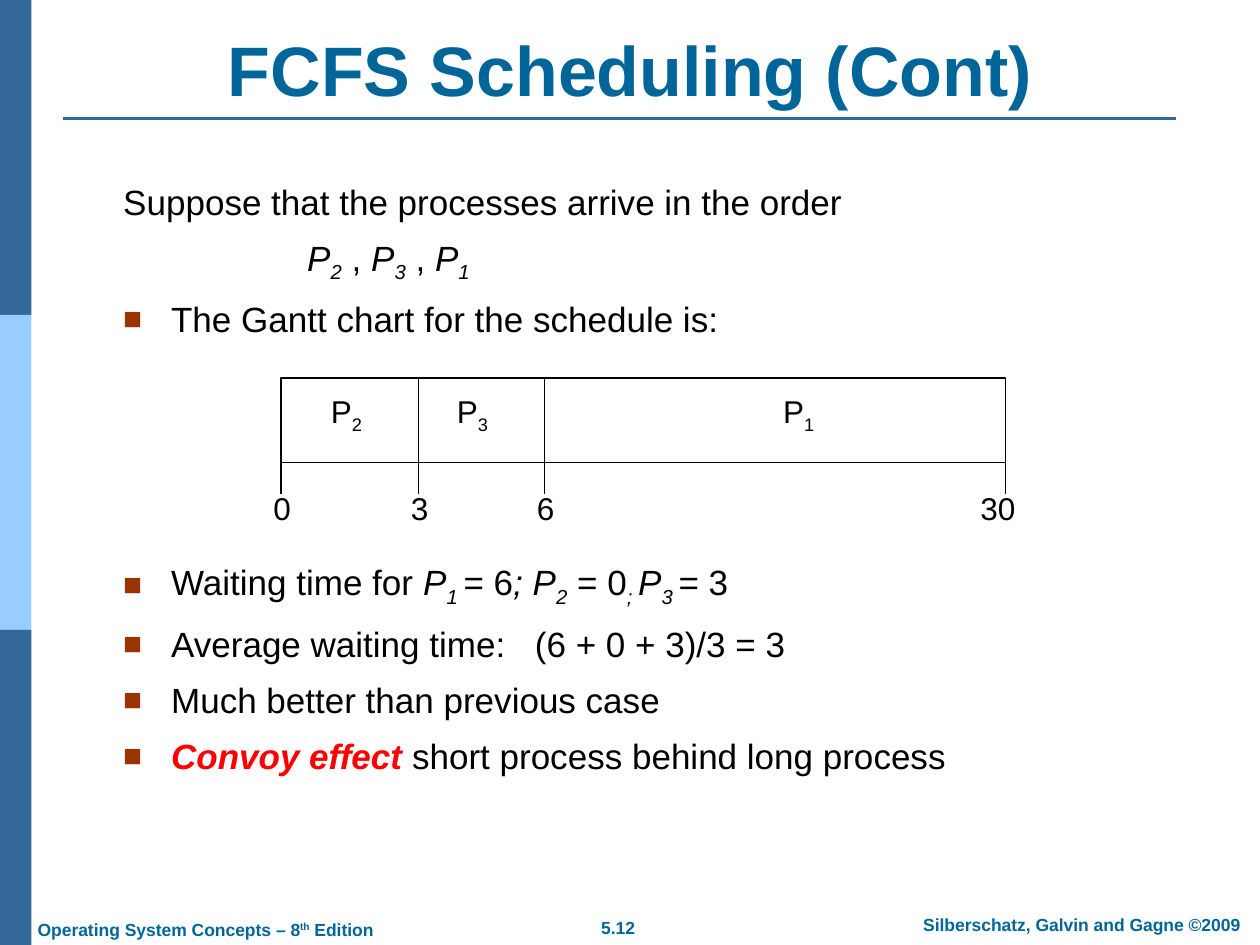
from lxml.etree import SubElement
from pptx import Presentation
from pptx.dml.color import RGBColor
from pptx.enum.shapes import MSO_CONNECTOR as LINE, MSO_SHAPE as SHAPE
from pptx.enum.text import MSO_ANCHOR as ANCHOR, MSO_AUTO_SIZE as AUTO, PP_ALIGN as ALIGN
from pptx.oxml.ns import qn
from pptx.util import Inches, Pt

BLUE = RGBColor(0x33, 0x66, 0x99)
LIGHT = RGBColor(0x99, 0xCC, 0xFF)
TEAL = RGBColor(0x00, 0x66, 0x99)
BLACK = RGBColor(0, 0, 0)
WHITE = RGBColor(255, 255, 255)
RED = RGBColor(255, 0, 0)
RUST = "993300"

TITLE = "FCFS Scheduling (Cont)"
BANDS = [BLUE, LIGHT, BLUE]

# Run styles: extra font values, baseline shift and letter spacing
STYLES = {
    "plain": ({}, {}),
    "it": ({"italic": True}, {}),
    "sub": ({}, {"baseline": "-25000"}),
    "itsub": ({"italic": True}, {"baseline": "-25000"}),
    "sup": ({}, {"baseline": "30000"}),
    "key": ({"italic": True, "bold": True, "color": RED}, {}),
    "wide": ({}, {"spc": "1110"}),
}


def proc(num, end=""):
    return [("P", "it"), (num + end, "itsub")]


# Body lines: left indent, bullet, space before in points, runs
BODY = [
    (0, False, 0, [("Suppose that the processes arrive in the order", "plain")]),
    (1.46, False, 8, proc("2") + [(" , ", "plain")] + proc("3")
     + [(" , ", "plain")] + proc("1")),
    (0.38, True, 8, [("The Gantt chart for the schedule is:", "plain")]),
    (0.38, True, 126, [("Waiting time for ", "plain")] + proc("1", " ")
     + [("= 6", "plain"), ("; ", "it")] + proc("2")
     + [(" = 0", "plain"), ("; ", "itsub")] + proc("3", " ") + [("= 3", "plain")]),
    (0.38, True, 8, [("Average waiting time:", "plain"), (" ", "wide"),
                     ("(6 + 0 + 3)/3 = 3", "plain")]),
    (0.38, True, 8, [("Much better than previous case", "plain")]),
    (0.38, True, 8, [("Convoy effect ", "key"),
                     ("short process behind long process", "plain")]),
]

# Gantt chart: time, tick x, label centre; process number, label centre
TICKS = [("0", 2.23, 2.24), ("3", 3.32, 3.33), ("6", 4.32, 4.33), ("30", 7.98, 7.92)]
JOBS = [("2", 2.75), ("3", 3.75), ("1", 6.34)]
TOP, BASE, FOOT = 3, 3.67, 3.92

# Footers: left, top, width, wrap, alignment, runs
FOOTERS = [
    (4.66, 7.23, 0.49, False, ALIGN.CENTER, [("5.12", "plain")]),
    (7.1, 7.2, 2.97, True, ALIGN.CENTER,
     [("Silberschatz, Galvin and Gagne ©2009", "plain")]),
    (0.2, 7.24, 2.88, False, ALIGN.LEFT,
     [("Operating System Concepts – 8", "plain"), ("th", "sup"), (" Edition", "plain")]),
]


def style(font, **values):
    color = values.pop("color", BLACK)
    for name, value in {"name": "Arial", **values}.items():
        setattr(font, name, value)
    font.color.rgb = color


def add_runs(para, runs, **base):
    for text, kind in runs:
        run = para.add_run()
        run.text = text
        extra, attrs = STYLES[kind]
        style(run.font, **{**base, **extra})
        for name, value in attrs.items():
            run._r.get_or_add_rPr().set(name, value)


def add_label(shapes, at, runs, align=ALIGN.CENTER, wrap=False, **base):
    frame = shapes.add_textbox(*map(Inches, at)).text_frame
    frame.word_wrap = wrap
    frame.auto_size = AUTO.SHAPE_TO_FIT_TEXT
    frame.vertical_anchor = ANCHOR.MIDDLE
    frame.paragraphs[0].alignment = align
    add_runs(frame.paragraphs[0], runs, **base)


def add_rect(shapes, at, fill, line=None):
    rect = shapes.add_shape(SHAPE.RECTANGLE, *map(Inches, at))
    rect.shadow.inherit = False
    rect.fill.solid()
    rect.fill.fore_color.rgb = fill
    if line is None:
        rect.line.fill.background()
    else:
        rect.line.color.rgb = line
        rect.line.width = Pt(0.75)


def add_line(shapes, x1, y1, x2, y2, color=BLACK, width=0.75):
    line = shapes.add_connector(LINE.STRAIGHT, *map(Inches, (x1, y1, x2, y2)))
    line.line.color.rgb = color
    line.line.width = Pt(width)
    SubElement(line._element.spPr, qn("a:effectLst"))


def set_bullet(para, indent):
    props = para._p.get_or_add_pPr()
    props.set("indent", str(-Inches(indent)))
    color = SubElement(props, qn("a:buClr"))
    SubElement(color, qn("a:srgbClr"), val=RUST)
    SubElement(props, qn("a:buSzPct"), val="90000")
    SubElement(props, qn("a:buFont"), typeface="Arial")
    SubElement(props, qn("a:buChar"), char="■")


def add_body(shapes):
    frame = shapes.add_textbox(*map(Inches, (0.88, 1.35, 9, 4.95))).text_frame
    frame.word_wrap = True
    frame.margin_top = Inches(0.08)
    for row, (indent, bullet, gap, runs) in enumerate(BODY):
        para = frame.add_paragraph() if row else frame.paragraphs[0]
        para.space_before = Pt(gap)
        para._p.get_or_add_pPr().set("marL", str(Inches(indent)))
        if bullet:
            set_bullet(para, indent)
        add_runs(para, runs, size=Pt(20))


def add_gantt(shapes):
    left, right = TICKS[0][1], TICKS[-1][1]
    add_rect(shapes, (left, TOP, right - left, BASE - TOP), WHITE, BLACK)
    for num, mid in JOBS:
        add_label(shapes, (mid - 0.23, 3.08, 0.46, 0.4),
                  [("P", "plain"), (num, "sub")], size=Pt(18))
    for time, x, mid in TICKS:
        add_line(shapes, x, BASE, x, FOOT)
        if left < x < right:
            add_line(shapes, x, TOP, x, BASE)
        wide = 0.2 + 0.14 * len(time)
        add_label(shapes, (mid - wide / 2, 3.83, wide, 0.4),
                  [(time, "plain")], size=Pt(18))


def add_title(title):
    title.left, title.top, title.width, title.height = map(Inches, (0.5, 0.3, 9, 0.63))
    frame = title.text_frame
    frame.vertical_anchor = ANCHOR.BOTTOM
    frame.paragraphs[0].alignment = ALIGN.CENTER
    add_runs(frame.paragraphs[0], [(TITLE, "plain")], size=Pt(40), bold=True, color=TEAL)


def main():
    deck = Presentation()
    deck.slide_width, deck.slide_height = Inches(10), Inches(7.5)
    slide = deck.slides.add_slide(deck.slide_layouts[5])
    shapes = slide.shapes
    for row, color in enumerate(BANDS):
        add_rect(shapes, (0, 2.5 * row, 0.25, 2.5), color)
    add_line(shapes, 0.5, 0.94, 9.33, 0.94, BLUE, 1.5)
    for left, top, width, wrap, align, runs in FOOTERS:
        add_label(shapes, (left, top, width, 0.27), runs, align, wrap,
                  size=Pt(10), bold=True, color=TEAL)
    add_title(shapes.title)
    add_body(shapes)
    add_gantt(shapes.add_group_shape().shapes)
    deck.save("out.pptx")


if __name__ == "__main__":
    main()
